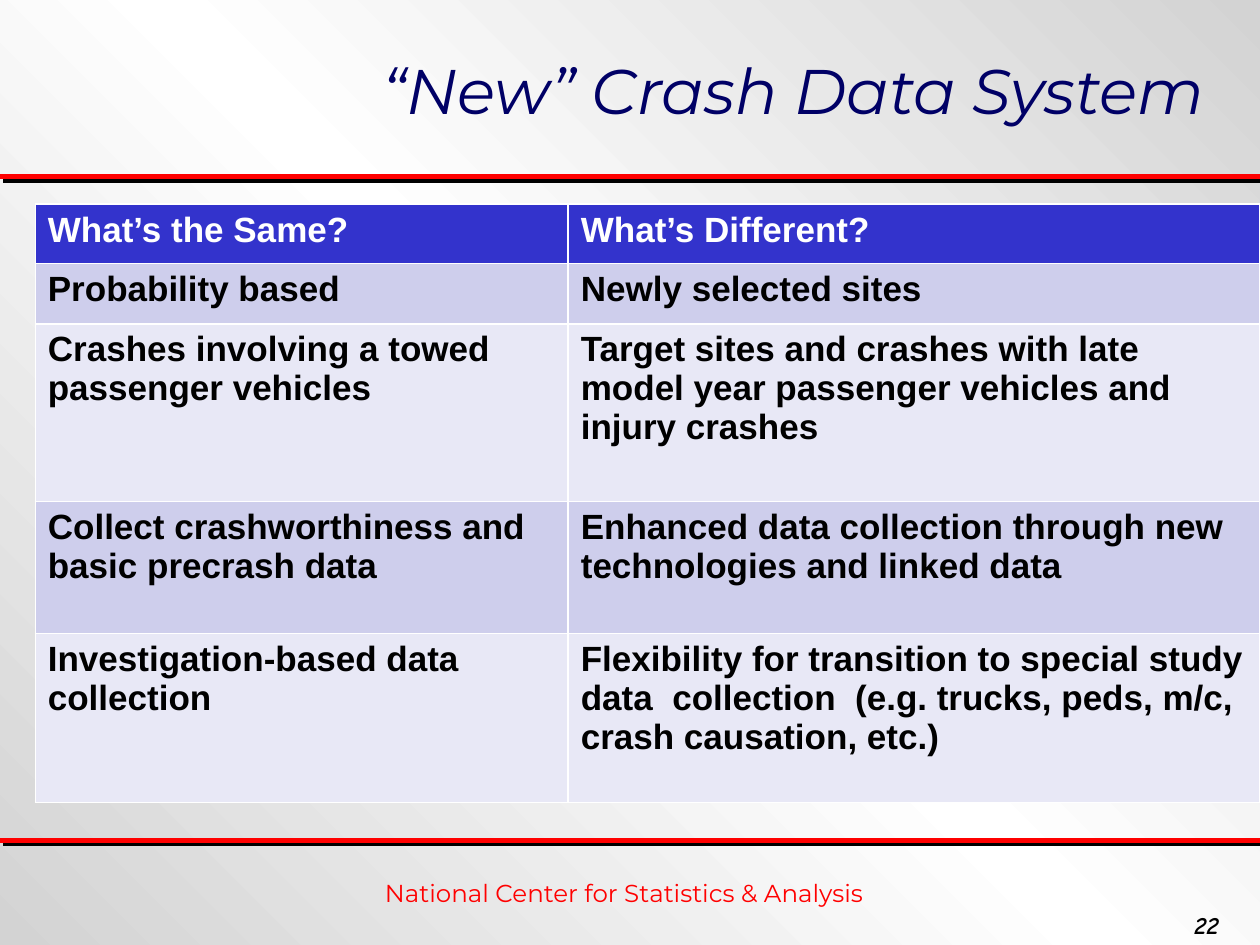
from copy import deepcopy
from lxml.etree import SubElement
from pptx import Presentation
from pptx.dml.color import RGBColor
from pptx.enum.shapes import MSO_CONNECTOR
from pptx.enum.text import MSO_ANCHOR, PP_ALIGN
from pptx.oxml.ns import qn
from pptx.util import Inches, Pt

TITLE = "“New” Crash Data System"
FOOTER = "National Center for Statistics & Analysis"
PAGE = "22"
ROWS = [
    ("What’s the Same?", "What’s Different?"),
    ("Probability based", "Newly selected sites"),
    ("Crashes involving a towed passenger vehicles",
     "Target sites and crashes with late model year passenger vehicles and injury crashes "),
    ("Collect crashworthiness and basic precrash data",
     "Enhanced data collection through new technologies and linked data"),
    ("Investigation-based data collection",
     "Flexibility for transition to special study data  collection  "
     "(e.g. trucks, peds, m/c, crash causation, etc.)"),
]
COLORS = {
    "edge": "D3D3D3", "white": "FFFFFF", "black": "000000", "red": "FF0000",
    "navy": "000066", "header": "3333CC", "odd": "CECEEC", "even": "E8E8F6",
}
W, H = 10, 7.5
COL_WIDTHS = (4.23, 5.49)
ROW_HEIGHTS = (0.47, 0.48, 1.41, 1.05, 1.34)
RULES = (1.4, 6.67)


def rgb(name):
    return RGBColor.from_string(COLORS[name])


def write(tf, text, font="Arial", size=20, color="black", bold=False, italic=False,
          align=PP_ALIGN.LEFT, anchor=MSO_ANCHOR.TOP, spacing=None):
    tf.word_wrap = True
    tf.vertical_anchor = anchor
    p = tf.paragraphs[0]
    p.alignment = align
    p.line_spacing = spacing
    r = p.add_run()
    r.text = text
    f = r.font
    f.name, f.size, f.bold, f.italic = font, Pt(size), bold, italic
    f.color.rgb = rgb(color)


def add_text(s, box, text, **fmt):
    write(s.shapes.add_textbox(*map(Inches, box)).text_frame, text, **fmt)


def add_background(s):
    fill = s.background.fill
    fill.gradient()
    fill.gradient_angle = 45
    stops = s.element.find(".//" + qn("a:gsLst"))
    stops.append(deepcopy(stops[-1]))
    for stop, pos, name in zip(fill.gradient_stops, (0, 0.5, 1), ("edge", "white", "edge")):
        stop.position = pos
        stop.color.rgb = rgb(name)


def add_rule(s, y):
    line = s.shapes.add_connector(MSO_CONNECTOR.STRAIGHT, 0, Inches(y), Inches(W), Inches(y))
    line.line.color.rgb = rgb("red")
    line.line.width = Pt(3)
    effects = SubElement(line._element.spPr, qn("a:effectLst"))
    shadow = SubElement(effects, qn("a:outerShdw"), dist=str(Pt(2.8)), dir="2700000",
                        algn="ctr", rotWithShape="0")
    SubElement(shadow, qn("a:srgbClr"), val=COLORS["black"])


def add_borders(cell):
    props = cell._tc.get_or_add_tcPr()
    for i, side in enumerate(("lnL", "lnR", "lnT", "lnB")):
        ln = props.makeelement(qn("a:" + side), {"w": str(Pt(1))})
        fill = SubElement(ln, qn("a:solidFill"))
        SubElement(fill, qn("a:srgbClr"), val=COLORS["white"])
        props.insert(i, ln)


def add_comparison(s):
    box = map(Inches, (0.28, 1.62, sum(COL_WIDTHS), sum(ROW_HEIGHTS)))
    table = s.shapes.add_table(len(ROWS), len(COL_WIDTHS), *box).table
    for col, width in zip(table.columns, COL_WIDTHS):
        col.width = Inches(width)
    for i, (row, height) in enumerate(zip(table.rows, ROW_HEIGHTS)):
        row.height = Inches(height)
        band = "header" if i == 0 else "odd" if i % 2 else "even"
        for cell, text in zip(row.cells, ROWS[i]):
            cell.fill.solid()
            cell.fill.fore_color.rgb = rgb(band)
            add_borders(cell)
            write(cell.text_frame, text, bold=True, color="black" if i else "white")


def main():
    prs = Presentation()
    prs.slide_width, prs.slide_height = Inches(W), Inches(H)
    s = prs.slides.add_slide(prs.slide_layouts[6])
    add_background(s)
    for y in RULES:
        add_rule(s, y)
    add_text(s, (0.58, 6.92, 8.75, 0.33), FOOTER, font="Montserrat", size=14,
             color="red", align=PP_ALIGN.CENTER)
    add_text(s, (9.38, 7.17, 0.62, 0.33), PAGE, font="Comic Neue", size=14,
             bold=True, italic=True)
    add_text(s, (0.31, 0.25, 9.35, 1), TITLE, font="Montserrat", size=36, color="navy",
             italic=True, align=PP_ALIGN.RIGHT, anchor=MSO_ANCHOR.MIDDLE, spacing=0.9)
    add_comparison(s)
    prs.save("out.pptx")


if __name__ == "__main__":
    main()
